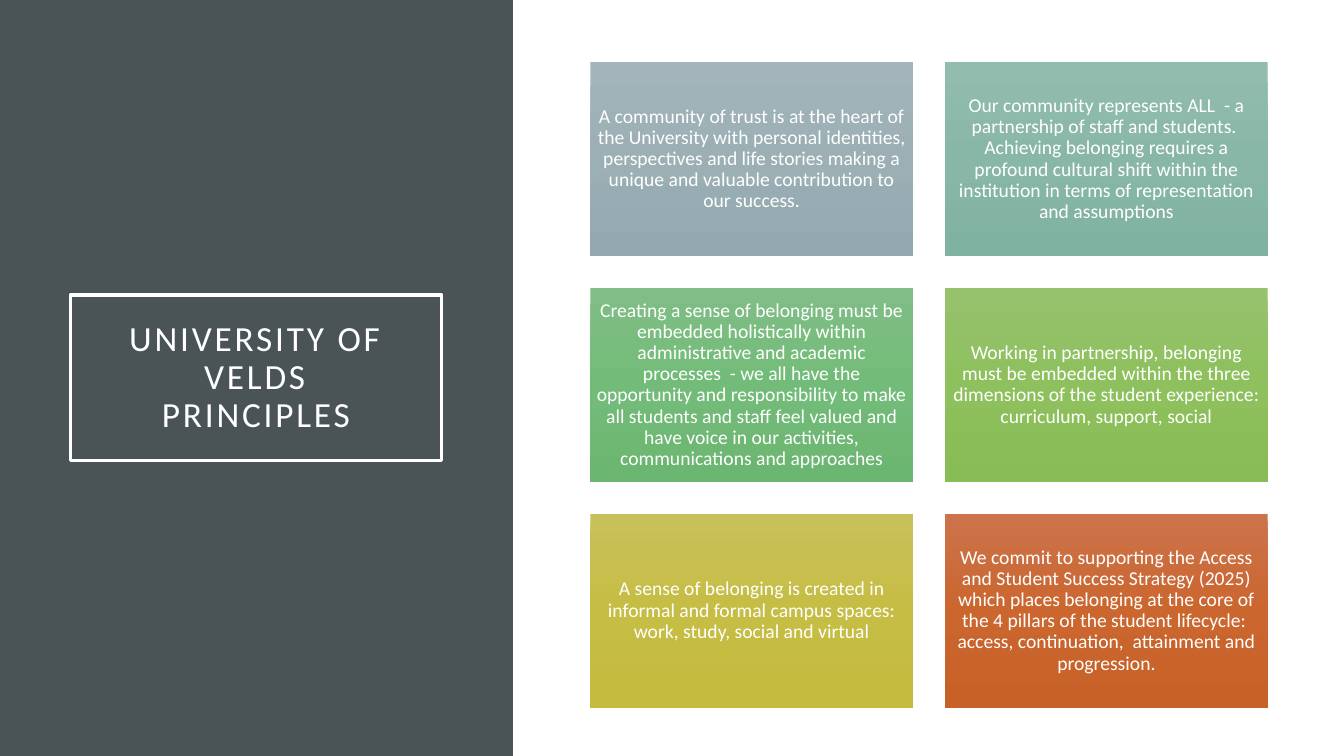
"""Build the slide of belonging principles: a dark title panel and six gradient cards."""
import copy

import pptx
import pptx.dml.color
import pptx.enum.shapes
import pptx.enum.text
import pptx.util

Cm = pptx.util.Cm
Pt = pptx.util.Pt

FONT = "Calibri"
WHITE = "FFFFFF"
PANEL = "4A5356"
TITLE = "UNIVERSITY OF VELDS\nPRINCIPLES"
CARDS = [
    ("A community of trust is at the heart of the University with personal identities, "
     "perspectives and life stories making a unique and valuable contribution to our success.",
     ("A3B5BB", "9BAFB5", "93A9AF")),
    ("Our community represents ALL  - a partnership of staff and students.  Achieving "
     "belonging requires a profound cultural shift within the institution in terms of "
     "representation and assumptions",
     ("92BCAD", "88B7A7", "80B2A1")),
    ("Creating a sense of belonging must be embedded holistically within administrative and "
     "academic processes  - we all have the opportunity and responsibility to make all "
     "students and staff feel valued and have voice in our activities, communications and "
     "approaches",
     ("80BE85", "73BB79", "6BB671")),
    ("Working in partnership, belonging must be embedded within the three dimensions of the "
     "student experience: curriculum, support, social",
     ("96C26D", "8EC05D", "88BC55")),
    ("A sense of belonging is created in informal and formal campus spaces: work, study, "
     "social and virtual",
     ("C8C05A", "C6BD45", "C4BA3D")),
    ("We commit to supporting the Access and Student Success Strategy (2025) which places "
     "belonging at the core of the 4 pillars of the student lifecycle:  access, "
     "continuation,  attainment and progression.",
     ("CC734B", "CB662F", "C86128")),
]

COLUMNS = 2
CARD_LEFT, CARD_TOP = 14.88, 1.57
CARD_W, CARD_H = 8.13, 4.88
GAP = 0.81


def rgb(value):
    return pptx.dml.color.RGBColor.from_string(value)


def add_rect(s, left, top, width, height):
    sp = s.shapes.add_shape(pptx.enum.shapes.MSO_SHAPE.RECTANGLE,
                            Cm(left), Cm(top), Cm(width), Cm(height))
    sp.shadow.inherit = False
    sp.fill.background()
    sp.line.fill.background()
    return sp


def fill_gradient(sp, colors):
    sp.fill.gradient()
    sp.fill.gradient_angle = 270
    first = sp.fill._fill._gradFill.gsLst[0]
    first.addnext(copy.deepcopy(first))
    for i, (stop, color) in enumerate(zip(sp.fill.gradient_stops, colors)):
        stop.position = i / (len(colors) - 1)
        stop.color.rgb = rgb(color)


def set_text(sp, text, size=14, color=WHITE, inset=0.15, spacing=0):
    tf = sp.text_frame
    tf.word_wrap = True
    tf.vertical_anchor = pptx.enum.text.MSO_ANCHOR.MIDDLE
    tf.margin_left = tf.margin_right = tf.margin_top = tf.margin_bottom = Cm(inset)
    p = tf.paragraphs[0]
    p.text = text
    p.alignment = pptx.enum.text.PP_ALIGN.CENTER
    p.line_spacing = 0.9
    for r in p.runs:
        r.font.name = FONT
        r.font.size = Pt(size)
        r.font.color.rgb = rgb(color)
        if spacing:
            r.font._element.set("spc", str(spacing * 100))


def main():
    prs = pptx.Presentation()
    prs.slide_width, prs.slide_height = Cm(33.87), Cm(19.05)
    s = prs.slides.add_slide(prs.slide_layouts[6])

    panel = add_rect(s, 0, 0, 12.93, 19.05)
    panel.fill.solid()
    panel.fill.fore_color.rgb = rgb(PANEL)

    title = add_rect(s, 1.78, 7.44, 9.35, 4.17)
    title.line.color.rgb = rgb(WHITE)
    title.line.width = Pt(2.5)
    set_text(title, TITLE, size=25.2, inset=0.51, spacing=2)

    for i, (text, colors) in enumerate(CARDS):
        row, column = divmod(i, COLUMNS)
        card = add_rect(s, CARD_LEFT + column * (CARD_W + GAP),
                        CARD_TOP + row * (CARD_H + GAP), CARD_W, CARD_H)
        fill_gradient(card, colors)
        set_text(card, text)

    prs.save("out.pptx")


if __name__ == "__main__":
    main()
